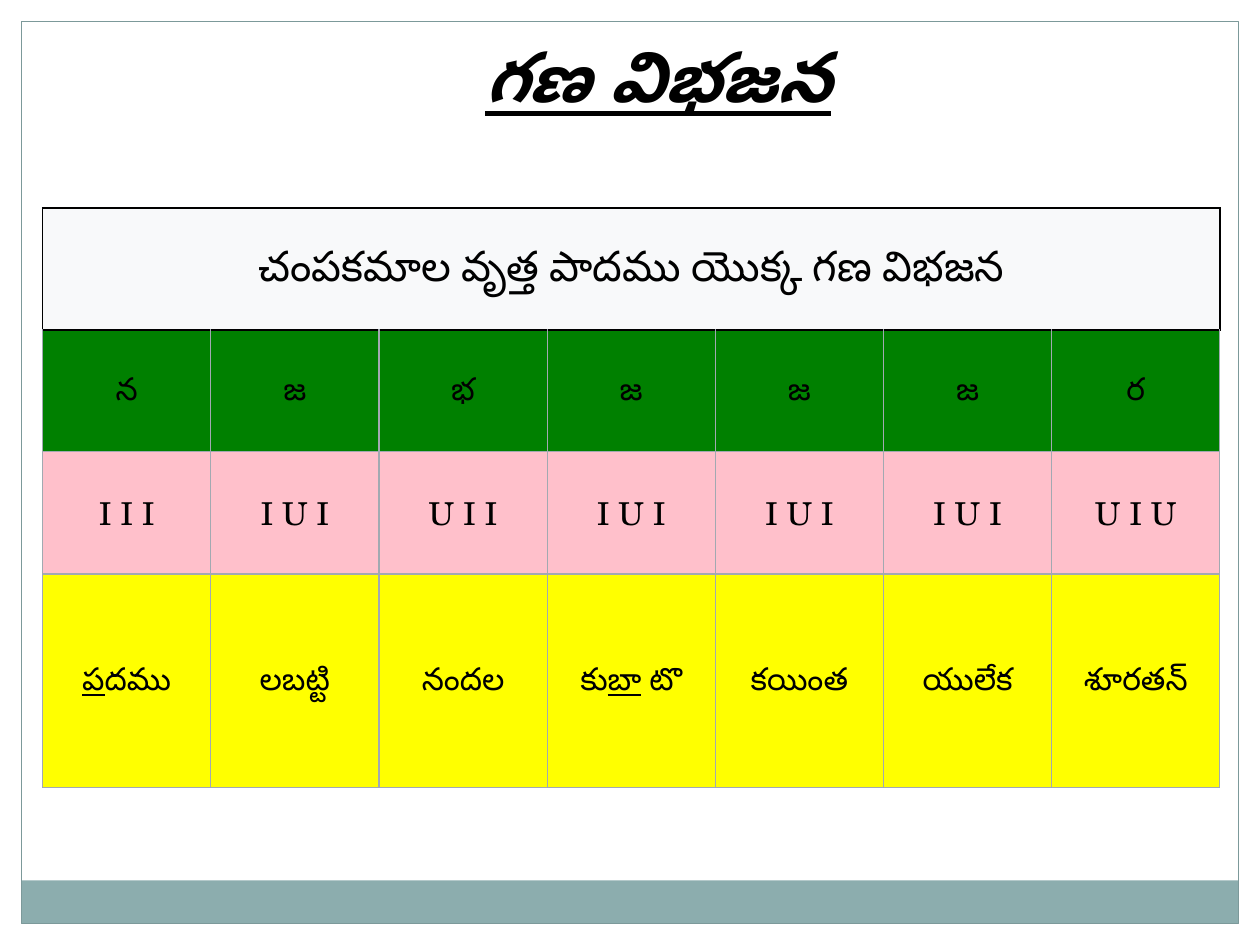
from lxml import etree
from pptx import Presentation
from pptx.dml.color import RGBColor
from pptx.enum.shapes import MSO_SHAPE
from pptx.enum.text import MSO_ANCHOR, MSO_AUTO_SIZE, PP_ALIGN
from pptx.oxml.ns import qn
from pptx.util import Cm, Pt

RECTANGLE = MSO_SHAPE.RECTANGLE
TOP, MIDDLE = MSO_ANCHOR.TOP, MSO_ANCHOR.MIDDLE
LEFT, CENTER = PP_ALIGN.LEFT, PP_ALIGN.CENTER
NO_AUTOFIT = MSO_AUTO_SIZE.NONE

FONT = "TeX Gyre Schola"
COLORS = {
    "text": "000000",
    "margin": "FFFFFF",
    "band": "8CADAE",
    "frame": "7C999A",
    "grid": "A2A9B1",
    "heading": "F8F9FA",
    "gana": "008000",
    "pattern": "FFC0CB",
    "verse": "FFFF00",
}
TITLE = "గణ విభజన"
HEADING = "చంపకమాల వృత్త పాదము యొక్క గణ విభజన"
GANAS = ["న", "జ", "భ", "జ", "జ", "జ", "ర"]
PATTERNS = ["I I I", "I U I", "U I I", "I U I", "I U I", "I U I", "U I U"]
# Underscores enclose the underlined letters.
VERSE = ["_ప_దము", "లబట్టి", "నందల", "కు_బా_ టొ", "కయింత", "యులేక", "శూరతన్"]

SLIDE_WIDTH, SLIDE_HEIGHT = 25.4, 19.05
MARGIN = 0.43
BAND_TOP, BAND_HEIGHT = 17.75, 0.87
COLUMN_WIDTH = 3.39
ROW_HEIGHTS = [2.46, 2.46, 2.46, 4.3]


def color(name):
    return RGBColor.from_string(COLORS[name])


def add_rectangle(slide, left, top, width, height, fill=None, line=None):
    shape = slide.shapes.add_shape(
        RECTANGLE, Cm(left), Cm(top), Cm(width), Cm(height))
    shape.shadow.inherit = False
    if fill:
        shape.fill.solid()
        shape.fill.fore_color.rgb = color(fill)
    else:
        shape.fill.background()
    if line:
        shape.line.color.rgb = color(line)
        shape.line.width = Pt(0.75)
    else:
        shape.line.fill.background()


def add_frame(slide):
    inner_width = SLIDE_WIDTH - 2 * MARGIN
    inner_height = SLIDE_HEIGHT - 2 * MARGIN
    add_rectangle(slide, 0, 0, SLIDE_WIDTH, MARGIN, "margin")
    for left in (SLIDE_WIDTH - MARGIN, 0):
        add_rectangle(slide, left, 0, MARGIN, SLIDE_HEIGHT, "margin")
    add_rectangle(slide, MARGIN, BAND_TOP, inner_width, BAND_HEIGHT, "band")
    add_rectangle(slide, MARGIN, MARGIN, inner_width, inner_height,
                  line="frame")


def format_paragraph(para, size, alignment):
    para.alignment = alignment
    para.font.name = FONT
    para.font.size = Pt(size)
    para.font.color.rgb = color("text")


def write_title(slide):
    title = slide.shapes.title
    title.left, title.top = Cm(9.53), Cm(0.53)
    title.width, title.height = Cm(12.7), Cm(5.38)
    frame = title.text_frame
    frame.text = TITLE
    frame.vertical_anchor = TOP
    frame.auto_size = NO_AUTOFIT
    para = frame.paragraphs[0]
    format_paragraph(para, 40, LEFT)
    para.font.bold = para.font.italic = para.font.underline = True


def set_border(cell, side, name, width):
    """Draw one side (L, R, T or B) of a cell; call before filling it."""
    properties = cell._tc.get_or_add_tcPr()
    line = etree.SubElement(properties, qn(f"a:ln{side}"), w=str(Pt(width)))
    fill = etree.SubElement(line, qn("a:solidFill"))
    etree.SubElement(fill, qn("a:srgbClr"), val=COLORS[name])


def format_cell(cell, text, fill, size, borders):
    for side, (name, width) in borders.items():
        set_border(cell, side, name, width)
    cell.fill.solid()
    cell.fill.fore_color.rgb = color(fill)
    cell.vertical_anchor = MIDDLE
    para = cell.text_frame.paragraphs[0]
    format_paragraph(para, size, CENTER)
    for index, part in enumerate(text.split("_")):
        if part:
            span = para.add_run()
            span.text = part
            if index % 2:
                span.font.underline = True


def add_gana_table(slide):
    columns = len(GANAS)
    table = slide.shapes.add_table(
        len(ROW_HEIGHTS), columns, Cm(0.86), Cm(4.19),
        Cm(columns * COLUMN_WIDTH), Cm(sum(ROW_HEIGHTS))).table
    for column in table.columns:
        column.width = Cm(COLUMN_WIDTH)
    for row, height in zip(table.rows, ROW_HEIGHTS):
        row.height = Cm(height)

    black = dict.fromkeys("LRTB", ("text", 1))
    gray = dict.fromkeys("LRTB", ("grid", 0.75))
    rows = [
        ([HEADING] + [""] * (columns - 1), "heading", 24, black),
        (GANAS, "gana", 18, {**gray, "T": ("text", 1)}),
        (PATTERNS, "pattern", 18, gray),
        (VERSE, "verse", 18, gray),
    ]
    table.cell(0, 0).merge(table.cell(0, columns - 1))
    for row, (texts, fill, size, borders) in zip(table.rows, rows):
        for cell, text in zip(row.cells, texts):
            format_cell(cell, text, fill, size, borders)


def main():
    deck = Presentation()
    deck.slide_width, deck.slide_height = Cm(SLIDE_WIDTH), Cm(SLIDE_HEIGHT)
    slide = deck.slides.add_slide(deck.slide_layouts[5])
    add_frame(slide)
    write_title(slide)
    add_gana_table(slide)
    deck.save("out.pptx")


if __name__ == "__main__":
    main()
